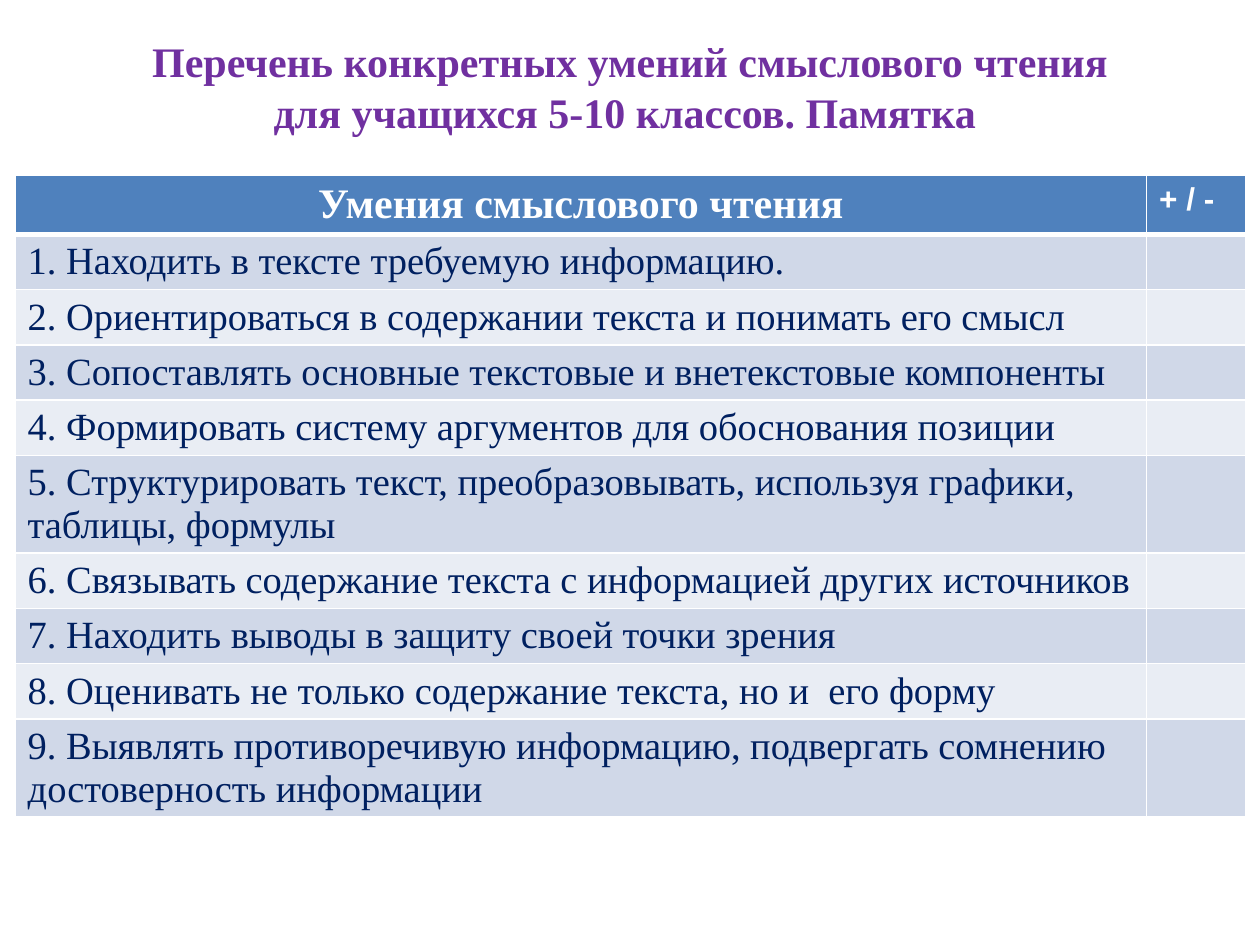
from dataclasses import dataclass

from lxml import etree
from pptx import Presentation, util as u
from pptx.dml.color import RGBColor
from pptx.enum import text
from pptx.oxml import ns


@dataclass(frozen=True)
class Theme:
    serif: str = "Times New Roman"
    sans: str = "Arial"
    title: str = "7030A0"
    head: str = "4F81BD"
    bands: tuple = ("D0D8E8", "E9EDF4")
    ink: str = "002060"
    white: str = "FFFFFF"
    big: int = 24
    body: int = 22
    mark: int = 18
    thin: int = 1
    thick: int = 3


THEME = Theme()
WIDE, HIGH = 10, 7.5
COLS = (8.98, 0.79)
ROW = 0.41

TITLE = (
    "Перечень конкретных умений смыслового чтения",
    "для учащихся 5-10 классов. Памятка ",
)
HEADS = ("Умения смыслового чтения", "+ / -")
SKILLS = (
    "Находить в тексте требуемую информацию.",
    "Ориентироваться в содержании текста и понимать его смысл",
    "Сопоставлять основные текстовые и внетекстовые компоненты",
    "Формировать систему аргументов для обоснования позиции",
    "Структурировать текст, преобразовывать, используя графики, таблицы, формулы",
    "Связывать содержание текста с информацией других источников",
    "Находить выводы в защиту своей точки зрения",
    "Оценивать не только содержание текста, но и  его форму",
    "Выявлять противоречивую информацию, подвергать сомнению достоверность информации",
)


def add_run(para, words, size, color, font=THEME.serif, bold=False):
    run = para.add_run()
    run.text = words
    run.font.name = font
    run.font.size = u.Pt(size)
    run.font.bold = bold
    run.font.color.rgb = RGBColor.from_string(color)


def add_title(slide):
    box = slide.shapes.title
    box.left, box.top = u.Inches(0.05 * WIDE), u.Inches(0.04 * HIGH)
    box.width, box.height = u.Inches(0.9 * WIDE), u.Inches(0.77)
    frame = box.text_frame
    frame.word_wrap = True
    frame.auto_size = text.MSO_AUTO_SIZE.NONE
    frame.vertical_anchor = text.MSO_ANCHOR.MIDDLE
    para = frame.paragraphs[0]
    para.alignment = text.PP_ALIGN.CENTER
    for i, line in enumerate(TITLE):
        if i:
            para.add_line_break()
        add_run(para, line, THEME.big, THEME.title, bold=True)


def style_cell(cell, fill, top, base):
    # Borders come before the fill in the cell properties
    props = cell._tc.get_or_add_tcPr()
    sides = {"L": THEME.thin, "R": THEME.thin, "T": top, "B": base}
    for side, width in sides.items():
        line = etree.SubElement(props, ns.qn(f"a:ln{side}"), w=str(u.Pt(width)))
        paint = etree.SubElement(line, ns.qn("a:solidFill"))
        etree.SubElement(paint, ns.qn("a:srgbClr"), val=THEME.white)
    cell.fill.solid()
    cell.fill.fore_color.rgb = RGBColor.from_string(fill)


def add_grid(slide):
    count = len(SKILLS) + 1
    frame = slide.shapes.add_table(
        count, len(COLS), u.Inches(0.12), u.Inches(1.39),
        u.Inches(sum(COLS)), u.Inches(ROW * count))
    table = frame.table
    for col, width in zip(table.columns, COLS):
        col.width = u.Inches(width)

    # Fills and borders
    for i, row in enumerate(table.rows):
        row.height = u.Inches(ROW)
        fill = THEME.bands[(i - 1) % 2] if i else THEME.head
        top = THEME.thick if i == 1 else THEME.thin
        base = THEME.thick if i == 0 else THEME.thin
        for cell in row.cells:
            style_cell(cell, fill, top, base)

    # Header row
    skill, mark = (table.cell(0, j).text_frame.paragraphs[0] for j in range(2))
    skill.alignment = text.PP_ALIGN.CENTER
    add_run(skill, HEADS[0], THEME.big, THEME.white, bold=True)
    add_run(mark, HEADS[1], THEME.mark, THEME.white, THEME.sans, True)

    # Numbered skills
    for i, words in enumerate(SKILLS, 1):
        para = table.cell(i, 0).text_frame.paragraphs[0]
        add_run(para, f"{i}. {words}", THEME.body, THEME.ink)


def main():
    deck = Presentation()
    deck.slide_width, deck.slide_height = u.Inches(WIDE), u.Inches(HIGH)
    slide = deck.slides.add_slide(deck.slide_layouts[5])
    add_title(slide)
    add_grid(slide)
    deck.save("out.pptx")


if __name__ == "__main__":
    main()
